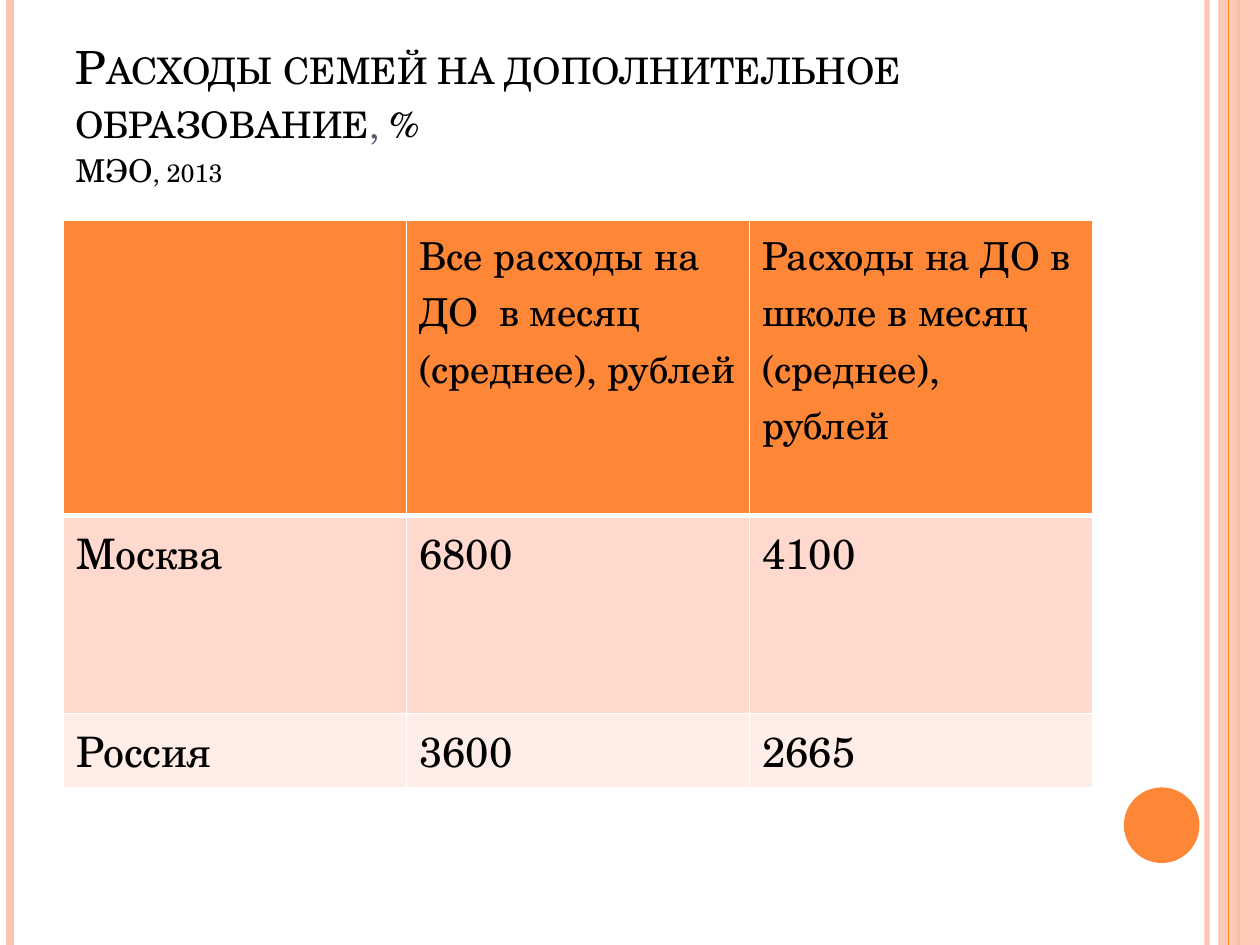
from typing import NamedTuple

from lxml.etree import SubElement
from pptx import Presentation
from pptx.dml.color import RGBColor
from pptx.enum.shapes import MSO_CONNECTOR as Connector, MSO_SHAPE as Preset
from pptx.enum.text import MSO_ANCHOR as Anchor, MSO_AUTO_SIZE as AutoSize, PP_ALIGN as Align
from pptx.oxml.ns import qn
from pptx.util import Inches, Pt

WIDTH, HEIGHT = Inches(10), Inches(7.5)
FONT = "TeX Gyre Schola"
ORANGE, PEACH, BLACK, WHITE, SLATE = "FE8637", "FEC3AE", "000000", "FFFFFF", "575F6D"


class Stripe(NamedTuple):
    x: float  # share of the slide width
    color: str
    weight: float
    opacity: int = 100


class Block(NamedTuple):
    preset: Preset
    box: tuple  # left, top, width, height as shares of the slide
    color: str
    opacity: int = 100


class TableRow(NamedTuple):
    height: float  # share of the slide height
    fill: str
    size: float
    texts: tuple
    top: float = 1  # border weights
    bottom: float = 1


STRIPES = [Stripe(0.958, PEACH, 3, 93), Stripe(0.008, PEACH, 4.5), Stripe(0.983, ORANGE, 1.5)]
PANEL = Block(Preset.RECTANGLE, (0.967, 0, 0.033, 1), PEACH, 87)
PANEL_STRIPE = Stripe(0.975, ORANGE, 0.75)
CIRCLE = Block(Preset.OVAL, (0.892, 0.8333, 0.06, 0.08), ORANGE)

# Each title line: line pitch, then runs of text, size and colour
TITLE = [
    (31.4, [("Расходы семей на дополнительное образование", 26.1, BLACK),
            (", ", 26.1, SLATE), ("%", 26.1, BLACK)]),
    (23.5, [("МЭО, 2013", 18, BLACK)]),
]

ROWS = [
    TableRow(0.312, ORANGE, 22,
             ("", "Все расходы на ДО  в месяц (среднее), рублей",
              "Расходы на ДО в школе в месяц (среднее),\nрублей"), bottom=3),
    TableRow(0.21, "FFD9CE", 24, ("Москва", "6800", "4100"), top=3),
    TableRow(0.077, "FFEDE8", 24, ("Россия", "3600", "2665")),
]


def rgb(color: str) -> RGBColor:
    return RGBColor.from_string(color)


def place(left: float, top: float, width: float, height: float) -> tuple:
    return int(left * WIDTH), int(top * HEIGHT), int(width * WIDTH), int(height * HEIGHT)


def set_format(target, values: dict) -> None:
    for name, value in values.items():
        setattr(target, name, value)


def set_opacity(element, percent: int) -> None:
    if percent < 100:
        color = next(element.iter(qn("a:srgbClr")))
        SubElement(color, qn("a:alpha"), val=str(percent * 1000))


def format_run(run, size: float, color: str) -> None:
    set_format(run.font, {"name": FONT, "size": Pt(size), "bold": False})
    run.font.color.rgb = rgb(color)


def draw_stripe(slide, stripe: Stripe) -> None:
    x = int(stripe.x * WIDTH)
    line = slide.shapes.add_connector(Connector.STRAIGHT, x, 0, x, HEIGHT)
    line.line.color.rgb = rgb(stripe.color)
    line.line.width = Pt(stripe.weight)
    properties = line._element.spPr
    set_opacity(properties, stripe.opacity)
    SubElement(properties, qn("a:effectLst"))


def draw_block(slide, block: Block) -> None:
    shape = slide.shapes.add_shape(block.preset, *place(*block.box))
    shape.shadow.inherit = False
    shape.fill.solid()
    shape.fill.fore_color.rgb = rgb(block.color)
    shape.line.fill.background()
    set_opacity(shape._element.spPr, block.opacity)


def write_title(slide) -> None:
    title = slide.shapes.title
    left, top, width, height = place(0.05, 0.04, 0.817, 0.167)
    set_format(title, {"left": left, "top": top, "width": width, "height": height})
    frame = title.text_frame
    set_format(frame, {"vertical_anchor": Anchor.BOTTOM, "word_wrap": True,
                       "auto_size": AutoSize.NONE})
    for index, (pitch, runs) in enumerate(TITLE):
        paragraph = frame.add_paragraph() if index else frame.paragraphs[0]
        set_format(paragraph, {"alignment": Align.LEFT, "line_spacing": Pt(pitch),
                               "space_before": Pt(0)})
        for text, size, color in runs:
            run = paragraph.add_run()
            run.text = text
            format_run(run, size, color)
            run.font._element.set("cap", "small")


def set_borders(cell, row: TableRow) -> None:
    weights = {"a:lnL": 1, "a:lnR": 1, "a:lnT": row.top, "a:lnB": row.bottom}
    properties = cell._tc.get_or_add_tcPr()
    for side, weight in weights.items():
        border = SubElement(properties, qn(side), w=str(Pt(weight)))
        SubElement(SubElement(border, qn("a:solidFill")), qn("a:srgbClr"), val=WHITE)


def draw_table(slide) -> None:
    height = sum(row.height for row in ROWS)
    frame = slide.shapes.add_table(len(ROWS), len(ROWS[0].texts),
                                   *place(0.0505, 0.2333, 0.8165, height))
    table = frame.table
    set_format(table, {"first_row": False, "horz_banding": False})
    for row_index, row in enumerate(ROWS):
        table.rows[row_index].height = int(row.height * HEIGHT)
        for column, text in enumerate(row.texts):
            cell = table.cell(row_index, column)
            set_borders(cell, row)
            cell.fill.solid()
            cell.fill.fore_color.rgb = rgb(row.fill)
            cell.text = text
            for paragraph in cell.text_frame.paragraphs:
                for run in paragraph.runs:
                    format_run(run, row.size, BLACK)


def main() -> None:
    presentation = Presentation()
    set_format(presentation, {"slide_width": WIDTH, "slide_height": HEIGHT})
    slide = presentation.slides.add_slide(presentation.slide_layouts[5])

    # Side decoration, back to front
    for stripe in STRIPES:
        draw_stripe(slide, stripe)
    draw_block(slide, PANEL)
    draw_stripe(slide, PANEL_STRIPE)
    draw_block(slide, CIRCLE)

    # Content
    write_title(slide)
    draw_table(slide)
    presentation.save("out.pptx")


if __name__ == "__main__":
    main()
